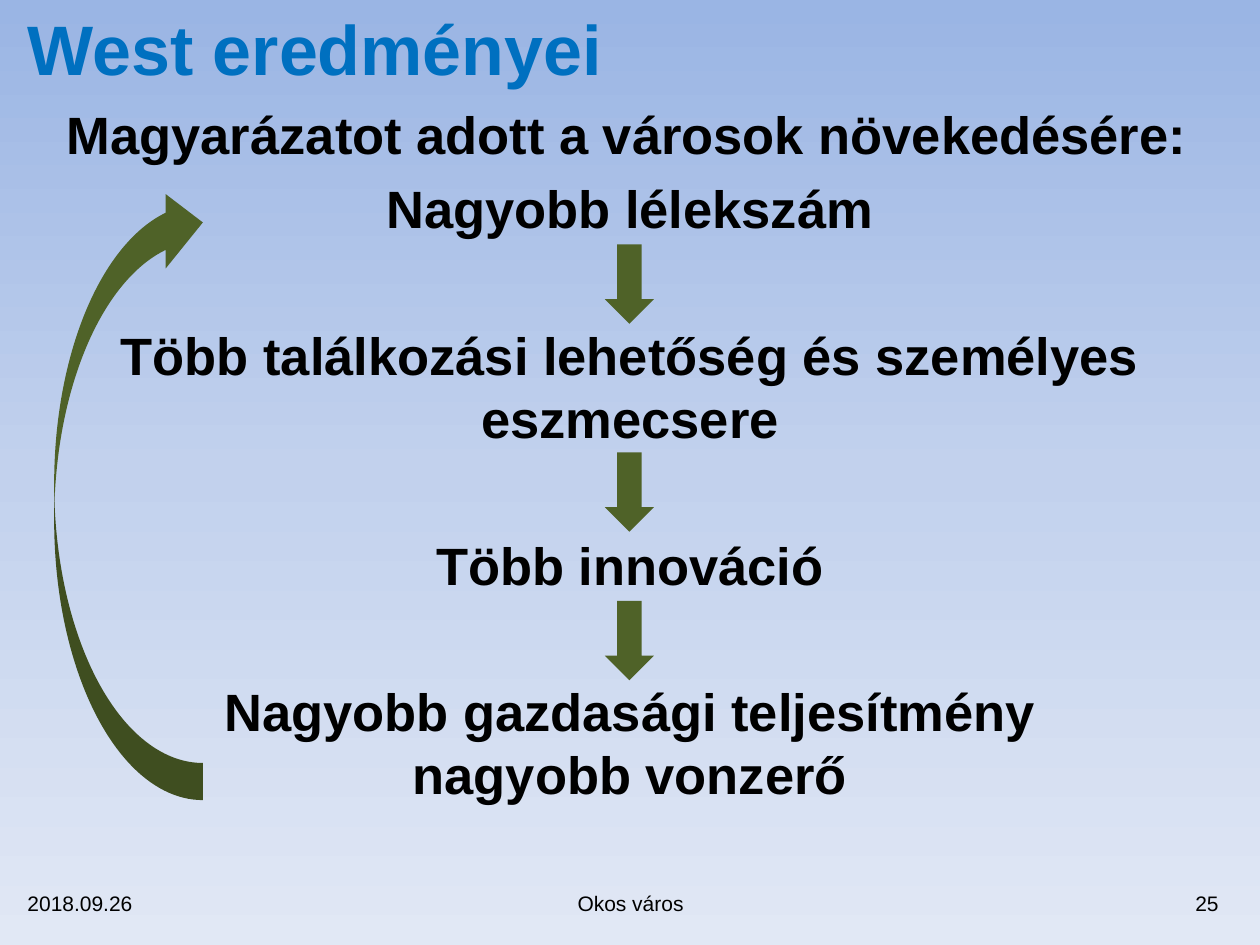
import copy

import pptx
import pptx.dml.color
import pptx.enum.shapes
import pptx.enum.text
import pptx.oxml.ns
import pptx.util
from pptx.util import Inches

COLORS = {
    "title": "0070C0",
    "text": "000000",
    "arrow": "4F6228",
    "sky_top": "9AB5E4",
    "sky_middle": "C2D1ED",
    "sky_bottom": "E1E8F5",
}
ALIGN = pptx.enum.text.PP_ALIGN
SHAPE = pptx.enum.shapes.MSO_SHAPE
HEADING = "Magyarázatot adott a városok növekedésére:"
STEPS = [
    "Nagyobb lélekszám",
    "Több találkozási lehetőség és személyes eszmecsere",
    "Több innováció",
    "Nagyobb gazdasági teljesítmény\vnagyobb vonzerő",
]
FOOTERS = [
    ("2018.09.26", 0.12, 1.97, ALIGN.LEFT),
    ("Okos város", 3.43, 3.15, ALIGN.CENTER),
    ("25", 7.8, 1.97, ALIGN.RIGHT),
]


def rgb(name):
    return pptx.dml.color.RGBColor.from_string(COLORS[name])


def place(box, left, top, width, height):
    box.left, box.top = Inches(left), Inches(top)
    box.width, box.height = Inches(width), Inches(height)


def write(para, text, size, color="text", bold=False, align=ALIGN.LEFT):
    para.text = text
    para.alignment = align
    for font in [para.font] + [span.font for span in para.runs]:
        font.name = "Arial"
        font.size = pptx.util.Pt(size)
        font.bold = bold
        font.color.rgb = rgb(color)


def paint_background(page):
    fill = page.background.fill
    fill.gradient()
    fill.gradient_angle = 270
    stop_list = page._element.find(".//" + pptx.oxml.ns.qn("a:gsLst"))
    stop_list.insert(1, copy.deepcopy(stop_list[0]))
    names = ["sky_top", "sky_middle", "sky_bottom"]
    for stop, name, position in zip(fill.gradient_stops, names, [0, 0.5, 1]):
        stop.color.rgb = rgb(name)
        stop.position = position


def fill_title(title):
    place(title, 0.12, 0.08, 9.76, 0.59)
    frame = title.text_frame
    frame.auto_size = pptx.enum.text.MSO_AUTO_SIZE.NONE
    frame.vertical_anchor = pptx.enum.text.MSO_ANCHOR.MIDDLE
    write(frame.paragraphs[0], "West eredményei", 40, "title", True)


def add_body_line(para, text, align, before, indent):
    write(para, text, 30, bold=True, align=align)
    para.line_spacing = pptx.util.Pt(36)
    para.space_before = pptx.util.Pt(before)
    properties = para._p.get_or_add_pPr()
    properties.set("marL", str(Inches(indent)))
    properties.set("indent", "0")
    bullet = properties.makeelement(pptx.oxml.ns.qn("a:buNone"), {})
    properties.find(pptx.oxml.ns.qn("a:defRPr")).addprevious(bullet)


def fill_body(body):
    place(body, 0.12, 0.76, 9.76, 6.06)
    frame = body.text_frame
    frame.auto_size = pptx.enum.text.MSO_AUTO_SIZE.NONE
    add_body_line(frame.paragraphs[0], HEADING, ALIGN.LEFT, 6, 0.31)
    for index, step in enumerate(STEPS):
        before = 48 if index else 6
        add_body_line(frame.add_paragraph(), step, ALIGN.CENTER, before, 0)


def add_footer(page, text, left, width, align):
    box = page.shapes.add_textbox(0, 0, 0, 0)
    place(box, left, 6.97, width, 0.39)
    frame = box.text_frame
    frame.word_wrap = True
    frame.vertical_anchor = pptx.enum.text.MSO_ANCHOR.MIDDLE
    write(frame.paragraphs[0], text, 12, align=align)


def add_arrow(page, kind, left, top, width, height, rotation=0):
    arrow = page.shapes.add_shape(kind, 0, 0, 0, 0)
    place(arrow, left, top, width, height)
    arrow.rotation = rotation
    arrow.shadow.inherit = False
    arrow.fill.solid()
    arrow.fill.fore_color.rgb = rgb("arrow")
    arrow.line.fill.background()


def main():
    deck = pptx.Presentation()
    deck.slide_width, deck.slide_height = Inches(10), Inches(7.5)
    page = deck.slides.add_slide(deck.slide_layouts[1])
    paint_background(page)
    fill_title(page.shapes.title)
    fill_body(page.placeholders[1])
    for footer in FOOTERS:
        add_footer(page, *footer)
    add_arrow(page, SHAPE.CURVED_LEFT_ARROW, 0.43, 1.47, 1.18, 4.88, 180)
    for top in [1.94, 3.59, 4.77]:
        add_arrow(page, SHAPE.DOWN_ARROW, 4.8, top, 0.39, 0.63)
    deck.save("out.pptx")


if __name__ == "__main__":
    main()
